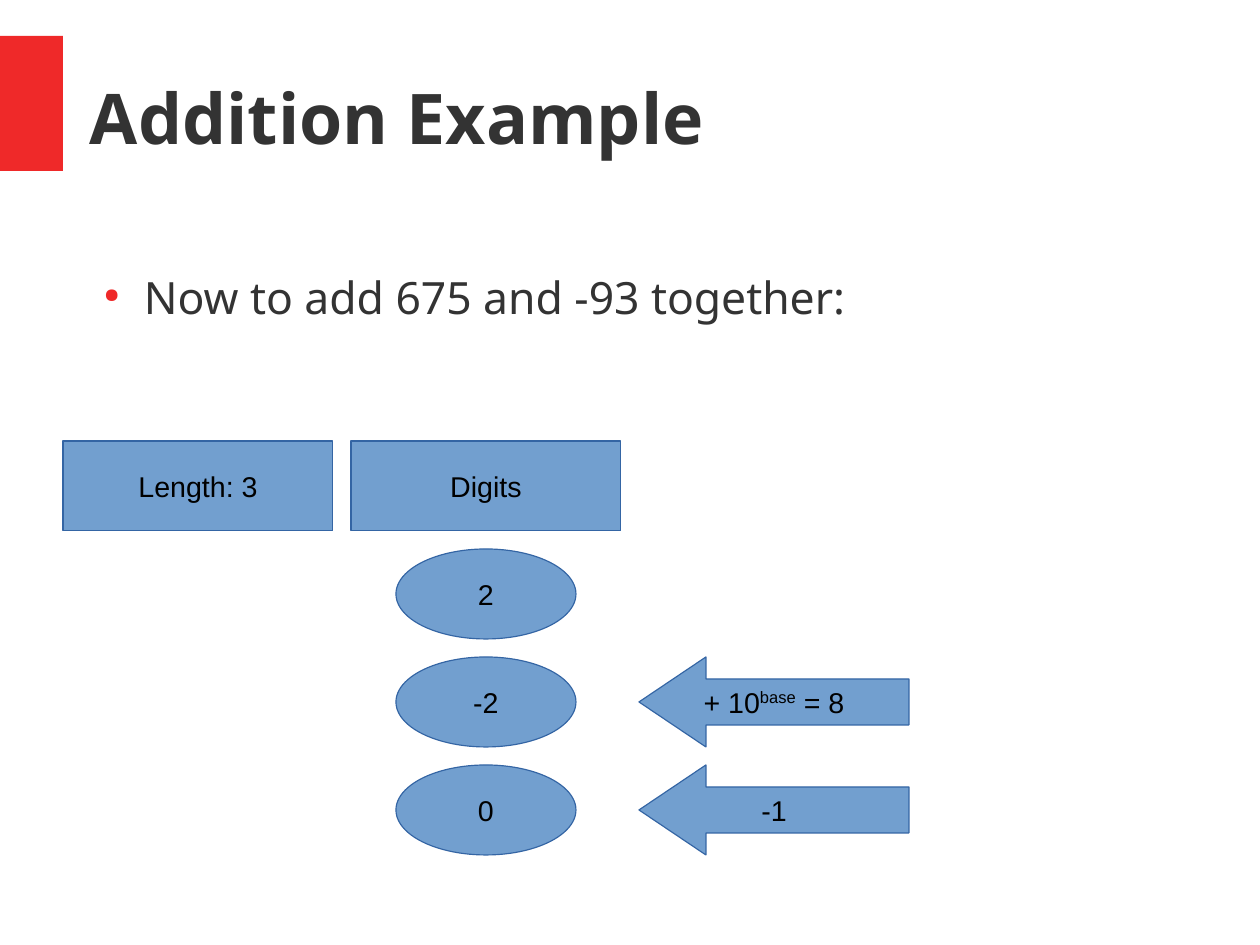
from lxml.etree import SubElement
from pptx import Presentation
from pptx.dml.color import RGBColor
from pptx.enum.shapes import MSO_SHAPE
from pptx.enum.text import MSO_ANCHOR, PP_ALIGN
from pptx.oxml.ns import qn
from pptx.util import Pt

PX = 8000
RED, INK, BLUE, EDGE, BLACK = "EF2929", "333333", "729FCF", "3465A4", "000000"

TITLE_FONT = {"name": "Noto Sans", "size": Pt(44), "bold": True}
BODY_FONT = {"name": "Noto Sans", "size": Pt(28)}
LABEL_FONT = {"name": "Arial", "size": Pt(18)}
NO_MARGINS = {f"margin_{side}": 0 for side in ("left", "top", "right", "bottom")}
LABEL_FRAME = {"word_wrap": False, "vertical_anchor": MSO_ANCHOR.MIDDLE}

LEFT, TOP = 63, 441
COLUMN_STEP, ROW_STEP = 288, 108
BOX_WIDTH, ROW_HEIGHT = 270, 90
DIGIT_WIDTH = 180
HEAD_LENGTH = 67


def color(value):
    return RGBColor.from_string(value)


def emu(*lengths):
    return [length * PX for length in lengths]


def apply(target, settings):
    for name, value in settings.items():
        setattr(target, name, value)


def add_run(paragraph, text, font, ink):
    run = paragraph.add_run()
    run.text = text
    apply(run.font, font)
    run.font.color.rgb = color(ink)
    return run


def add_text(slide, box, text, font, frame_settings):
    frame = slide.shapes.add_textbox(*emu(*box)).text_frame
    apply(frame, {"word_wrap": True, **NO_MARGINS, **frame_settings})
    paragraph = frame.paragraphs[0]
    add_run(paragraph, text, font, INK)
    return paragraph


def add_bullet(paragraph):
    paragraph.space_after = Pt(14.1)
    props = paragraph._p.get_or_add_pPr()
    props.set("marL", str(54 * PX))
    props.set("indent", str(-40 * PX))
    SubElement(SubElement(props, qn("a:buClr")), qn("a:srgbClr"), val=RED)
    SubElement(props, qn("a:buSzPct"), val="45000")
    SubElement(props, qn("a:buChar"), char="●")


def paint(shape, fill, edge=None):
    shape.shadow.inherit = False
    shape.fill.solid()
    shape.fill.fore_color.rgb = color(fill)
    if edge:
        shape.line.color.rgb = color(edge)
        shape.line.width = Pt(0.75)
    else:
        shape.line.fill.background()


def add_label(shape, text, exponent="", rest=""):
    paint(shape, BLUE, EDGE)
    apply(shape.text_frame, LABEL_FRAME)
    paragraph = shape.text_frame.paragraphs[0]
    paragraph.alignment = PP_ALIGN.CENTER
    add_run(paragraph, text, LABEL_FONT, BLACK)
    if exponent:
        raised = add_run(paragraph, exponent, LABEL_FONT, BLACK)
        raised._r.get_or_add_rPr().set("baseline", "33000")
        add_run(paragraph, rest, LABEL_FONT, BLACK)


def cell_origin(column, row):
    return LEFT + column * COLUMN_STEP, TOP + row * ROW_STEP


def add_header(slide, column, text):
    box = emu(*cell_origin(column, 0), BOX_WIDTH, ROW_HEIGHT)
    add_label(slide.shapes.add_shape(MSO_SHAPE.RECTANGLE, *box), text)


def add_digit(slide, row, text):
    x, y = cell_origin(1, row)
    inset = (BOX_WIDTH - DIGIT_WIDTH) // 2
    box = emu(x + inset, y, DIGIT_WIDTH, ROW_HEIGHT)
    add_label(slide.shapes.add_shape(MSO_SHAPE.OVAL, *box), text)


def add_carry_arrow(slide, row, *texts):
    x, y = cell_origin(2, row)
    neck, tail = x + HEAD_LENGTH, x + BOX_WIDTH
    middle, bottom = y + ROW_HEIGHT // 2, y + ROW_HEIGHT
    shaft_top, shaft_bottom = y + ROW_HEIGHT // 4, bottom - ROW_HEIGHT // 4
    outline = slide.shapes.build_freeform(tail, shaft_top, scale=PX)
    outline.add_line_segments([
        (neck, shaft_top), (neck, y), (x, middle), (neck, bottom),
        (neck, shaft_bottom), (tail, shaft_bottom),
    ])
    add_label(outline.convert_to_shape(), *texts)


def main():
    deck = Presentation()
    deck.slide_width, deck.slide_height = emu(1260, 945)
    slide = deck.slides.add_slide(deck.slide_layouts[6])

    accent = slide.shapes.add_shape(MSO_SHAPE.RECTANGLE, *emu(0, 36, 63, 135))
    paint(accent, RED)
    add_text(slide, (90, 38, 1106, 158), "Addition Example", TITLE_FONT,
             {"vertical_anchor": MSO_ANCHOR.MIDDLE})
    add_bullet(add_text(slide, (90, 270, 1080, 63),
                        "Now to add 675 and -93 together:", BODY_FONT, {}))

    for column, heading in enumerate(("Length: 3", "Digits")):
        add_header(slide, column, heading)
    for row, digit in enumerate(("2", "-2", "0"), start=1):
        add_digit(slide, row, digit)
    add_carry_arrow(slide, 2, "+ 10", "base", " = 8")
    add_carry_arrow(slide, 3, "-1")

    deck.save("out.pptx")


if __name__ == "__main__":
    main()
